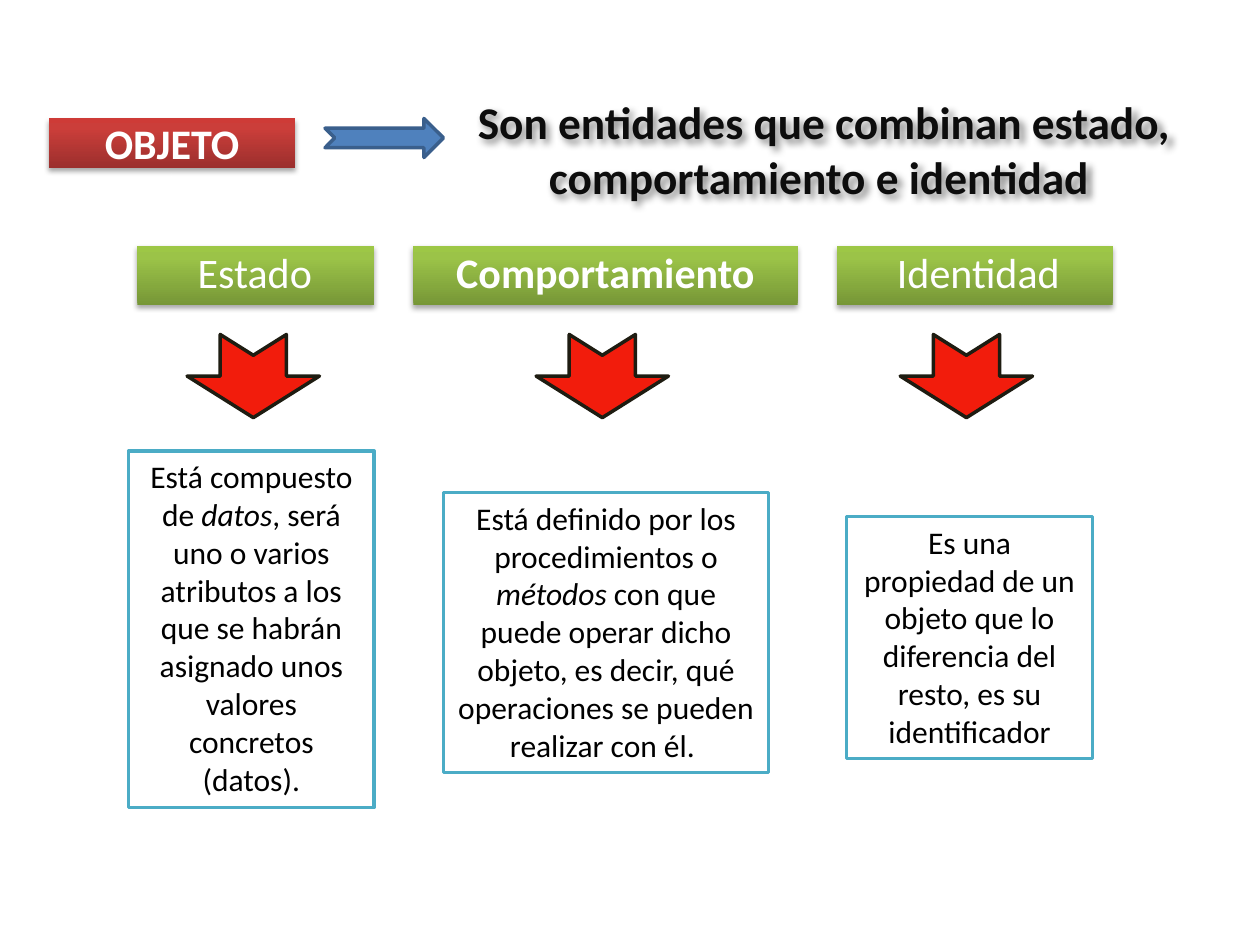
from copy import deepcopy
from pptx import Presentation
from pptx.dml.color import RGBColor
from pptx.enum.shapes import MSO_SHAPE as Form
from pptx.enum.text import MSO_ANCHOR as Anchor, MSO_AUTO_SIZE as Fit, PP_ALIGN as Align
from pptx.oxml import parse_xml
from pptx.oxml.ns import nsdecls, qn
from pptx.util import Inches, Pt

RED = ((0, "9C2F2D"), (0.8, "CB3E3A"), (1, "CE3B37"))
GREEN = ((0, "779737"), (0.8, "9BC348"), (1, "9DC746"))


def tint(code):
    return RGBColor.from_string(code)


def write(shape, text, size=18, color="000000", bold=False, align=Align.CENTER,
          anchor=Anchor.TOP, fit=Fit.NONE, before=0, lines=1.0, left=0):
    frame = shape.text_frame
    frame.word_wrap = True
    frame.auto_size = fit
    frame.vertical_anchor = anchor
    para = frame.paragraphs[0]
    para.alignment = align
    para.space_before = Pt(before)
    para.line_spacing = lines
    if left:
        props = para._p.get_or_add_pPr()
        props.set("marL", str(Inches(left)))
        props.set("indent", "0")
    for spot, part in enumerate(text.split("*")):
        run = para.add_run()
        run.text = part
        font = run.font
        font.name = "Calibri"
        font.size = Pt(size)
        font.bold = bold
        font.italic = spot % 2 == 1
        font.color.rgb = tint(color)


class Deck:
    edge = 2
    label = 24

    def __init__(self):
        self.show = Presentation()
        self.show.slide_width = Inches(10)
        self.show.slide_height = Inches(7.5)
        self.slide = self.show.slides.add_slide(self.show.slide_layouts[0])

    def place(self, shape, spot):
        shape.left, shape.top, shape.width, shape.height = map(Inches, spot)

    def shape(self, form, spot, fill=None, line=None):
        shape = self.slide.shapes.add_shape(form, *map(Inches, spot))
        shape.shadow.inherit = False
        if fill:
            shape.fill.solid()
            shape.fill.fore_color.rgb = tint(fill)
        if line:
            shape.line.color.rgb = tint(line)
            shape.line.width = Pt(self.edge)
        else:
            shape.line.fill.background()
        return shape

    def blend(self, shape, stops):
        shape.fill.gradient()
        shape.fill.gradient_angle = 90
        rows = shape._element.spPr.find(qn("a:gradFill")).find(qn("a:gsLst"))
        rows.append(deepcopy(rows[-1]))
        for stop, (place, code) in zip(shape.fill.gradient_stops, stops):
            stop.position = place
            stop.color.rgb = tint(code)

    def shade(self, shape, blur=3.1, dist=1.8, angle=90, alpha=35):
        shape.shadow.inherit = False
        effect = shape._element.spPr.find(qn("a:effectLst"))
        effect.append(parse_xml(
            f'<a:outerShdw {nsdecls("a")} blurRad="{Pt(blur)}" dist="{Pt(dist)}" '
            f'dir="{angle * 60000}" rotWithShape="0"><a:srgbClr val="000000">'
            f'<a:alpha val="{alpha * 1000}"/></a:srgbClr></a:outerShdw>'))

    def title(self, text, spot):
        shape = self.slide.shapes.title
        self.place(shape, spot)
        self.blend(shape, RED)
        self.shade(shape)
        write(shape, text, size=self.label, color="FFFFFF", bold=True, anchor=Anchor.MIDDLE)

    def body(self, text, spot):
        shape = self.slide.placeholders[1]
        self.place(shape, spot)
        self.shade(shape, blur=4, dist=3, angle=45, alpha=45)
        write(shape, text, size=25.9, color="0D0D0D", bold=True, before=5.2)

    def head(self, text, spot, **style):
        shape = self.shape(Form.RECTANGLE, spot)
        self.blend(shape, GREEN)
        self.shade(shape)
        write(shape, text, size=self.label, color="FFFFFF", before=4.8, lines=0.9, **style)

    def arrow(self, spot, fill, line, turn=0):
        shape = self.shape(Form.NOTCHED_RIGHT_ARROW, spot, fill, line)
        shape.rotation = turn

    def box(self, text, spot):
        shape = self.shape(Form.RECTANGLE, spot, "FFFFFF", "4BACC6")
        write(shape, text, fit=Fit.SHAPE_TO_FIT_TEXT)


def main():
    deck = Deck()
    deck.title("OBJETO", (0.39, 0.94, 1.95, 0.39))
    deck.body("Son entidades que combinan estado, comportamiento e identidad ",
              (3.55, 0.7, 5.98, 1.02))
    deck.arrow((2.58, 0.94, 0.94, 0.31), "4F81BD", "3A5F8C")

    inset = dict(align=Align.LEFT, left=0.38)
    heads = (("Estado", 1.09, 1.88, inset),
             ("Comportamiento", 3.28, 3.05, dict(bold=True)),
             ("Identidad", 6.64, 2.19, inset))
    for text, left, width, style in heads:
        deck.head(text, (left, 1.95, width, 0.47), **style)

    for left in (1.68, 4.45, 7.34):
        deck.arrow((left, 2.46, 0.66, 1.05), "F21C0C", "1E1C11", turn=90)

    boxes = (("Está compuesto de *datos*, será uno o varios atributos a los que "
              "se habrán asignado unos valores concretos (datos).",
              (1.02, 3.58, 1.95, 2.83)),
             ("Está definido por los procedimientos o *métodos* con que puede operar "
              "dicho objeto, es decir, qué operaciones se pueden realizar con él. ",
              (3.52, 3.91, 2.58, 2.22)),
             ("Es una propiedad de un objeto que lo diferencia del resto, "
              "es su identificador", (6.72, 4.1, 1.95, 1.92)))
    for text, spot in boxes:
        deck.box(text, spot)
    deck.show.save("out.pptx")


if __name__ == "__main__":
    main()
